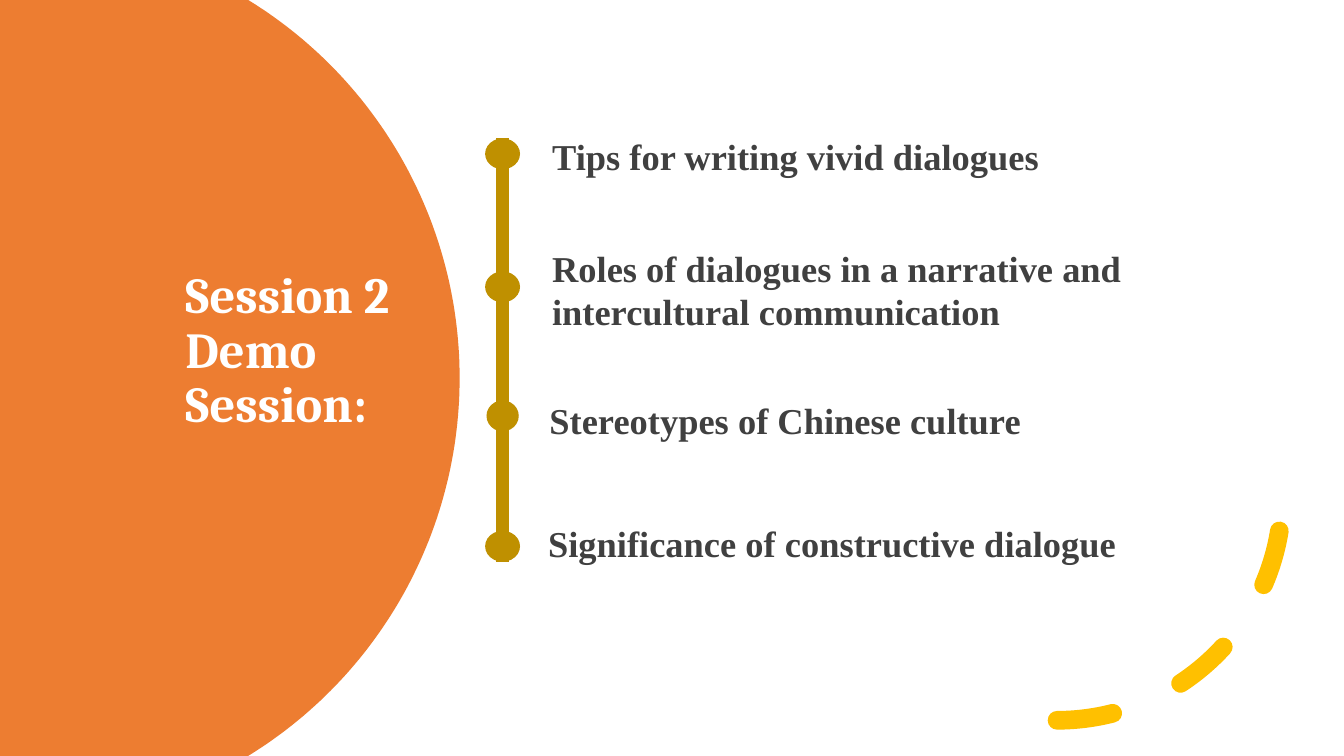
import math

from lxml import etree
from pptx import Presentation
from pptx.dml.color import RGBColor
from pptx.enum import dml, shapes, text
from pptx.oxml import ns
from pptx.util import Inches, Pt

ORANGE, GOLD, YELLOW = "ED7D31", "BF9000", "FFC000"
WHITE, GREY = "FFFFFF", "404040"
WIDTH = 10
HEIGHT = WIDTH * 9 / 16
TIMELINE_X, DOT_HEIGHT = 3.74, 0.23
TOPICS = [
    ("Tips for writing vivid dialogues", (4.01, 0.95, 4.09, 0.43)),
    ("Roles of dialogues in a narrative and intercultural communication",
     (4.01, 1.78, 5.04, 0.76)),
    ("Stereotypes of Chinese culture", (3.99, 2.91, 5.04, 0.76)),
    ("Significance of constructive dialogue", (3.98, 3.83, 5.34, 0.43)),
]
DOTS = [(1.03, 0.26), (2.02, 0.26), (2.98, 0.24), (3.95, 0.26)]


def color(value):
    """Turn a hex string into a colour."""
    return RGBColor.from_string(value)


def inches(*lengths):
    """Turn numbers into lengths."""
    return [Inches(length) for length in lengths]


def fill_shape(shape, value):
    """Give a shape a plain fill without line or shadow."""
    shape.shadow.inherit = False
    shape.fill.solid()
    shape.fill.fore_color.rgb = color(value)
    shape.line.fill.background()


def style_line(line, value, width):
    """Set the colour and width of a line."""
    line.color.rgb = color(value)
    line.width = Pt(width)


def format_text(text_frame, font_name, size, value):
    """Format every run of a text frame in bold."""
    text_frame.word_wrap = True
    for paragraph in text_frame.paragraphs:
        paragraph.alignment = text.PP_ALIGN.LEFT
        for run in paragraph.runs:
            run.font.name = font_name
            run.font.size = Pt(size)
            run.font.bold = True
            run.font.color.rgb = color(value)


def add_panel(slide):
    """Draw the left panel as a circle cut off by the slide edges."""
    center_x, radius, middle = 0.12, 3.3, HEIGHT / 2
    limit = math.asin(middle / radius)
    steps = 120
    angles = [limit * (2 * step / steps - 1) for step in range(steps + 1)]
    curve = [(Inches(center_x + radius * math.cos(angle)),
              Inches(middle + radius * math.sin(angle))) for angle in angles]
    builder = slide.shapes.build_freeform(0, 0)
    builder.add_line_segments(curve + [(0, Inches(HEIGHT))], close=True)
    fill_shape(builder.convert_to_shape(), ORANGE)


def set_title(slide):
    """Place and format the title over the panel."""
    title = slide.shapes.title
    title.left, title.top, title.width, title.height = inches(1.28, 0.79, 2.14, 3.66)
    title.text_frame.text = "Session 2\vDemo Session:"
    title.text_frame.vertical_anchor = text.MSO_ANCHOR.MIDDLE
    title.text_frame.auto_size = text.MSO_AUTO_SIZE.NONE
    title.text_frame.paragraphs[0].line_spacing = 0.9
    format_text(title.text_frame, "Cambria", 27, WHITE)
    slide.shapes._spTree.append(title._element)


def add_dashed_arc(slide):
    """Draw the dashed quarter circle with round dash ends."""
    arc = slide.shapes.add_shape(shapes.MSO_SHAPE.ARC, *inches(6.19, 2.01, 3.35, 3.35))
    arc.shadow.inherit = False
    arc.fill.background()
    style_line(arc.line, YELLOW, 10)
    arc.line.dash_style = dml.MSO_LINE.DASH
    arc.line._get_or_add_ln().set("cap", "rnd")
    arc._element.spPr.find(ns.qn("a:xfrm")).set("flipV", "1")


def add_timeline(slide):
    """Draw the vertical line from the first dot to the last."""
    top, bottom = DOTS[0][0], DOTS[-1][0] + DOT_HEIGHT
    line = slide.shapes.add_connector(
        shapes.MSO_CONNECTOR.STRAIGHT, *inches(TIMELINE_X, top, TIMELINE_X, bottom))
    style_line(line.line, GOLD, 7)
    etree.SubElement(line._element.spPr, ns.qn("a:effectLst"))


def add_topic(slide, wording, box):
    """Add the text of one topic."""
    text_frame = slide.shapes.add_textbox(*inches(*box)).text_frame
    text_frame.text = wording
    format_text(text_frame, "Times New Roman", 19.5, GREY)
    text_frame.auto_size = text.MSO_AUTO_SIZE.SHAPE_TO_FIT_TEXT


def add_dot(slide, top, width):
    """Add one dot centred on the timeline."""
    dot = slide.shapes.add_shape(
        shapes.MSO_SHAPE.OVAL, *inches(TIMELINE_X - width / 2, top, width, DOT_HEIGHT))
    fill_shape(dot, GOLD)


def main():
    """Build and save the slide."""
    presentation = Presentation()
    presentation.slide_width, presentation.slide_height = inches(WIDTH, HEIGHT)
    slide = presentation.slides.add_slide(presentation.slide_layouts[5])
    add_panel(slide)
    set_title(slide)
    add_dashed_arc(slide)
    add_timeline(slide)
    for wording, box in TOPICS:
        add_topic(slide, wording, box)
    for top, width in DOTS:
        add_dot(slide, top, width)
    presentation.save("out.pptx")


if __name__ == "__main__":
    main()
